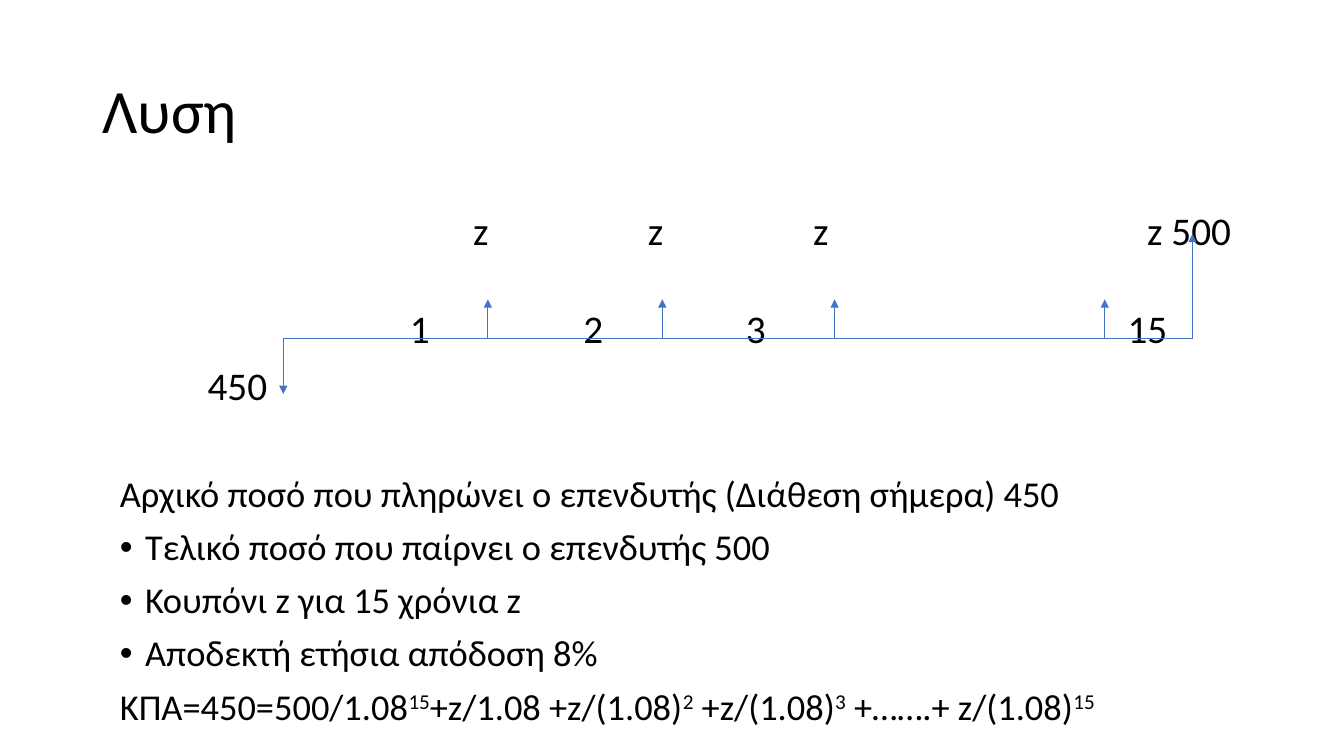
from dataclasses import dataclass

from lxml.etree import SubElement
from pptx import Presentation
from pptx.dml.color import RGBColor
from pptx.enum.shapes import MSO_CONNECTOR
from pptx.enum.text import MSO_ANCHOR
from pptx.oxml.ns import qn
from pptx.util import Inches, Pt


@dataclass(frozen=True)
class Theme:
    font: str = "Calibri"
    ink: RGBColor = RGBColor(0x00, 0x00, 0x00)
    accent: RGBColor = RGBColor(0x44, 0x72, 0xC4)
    title_size: float = 44
    label_size: float = 28
    body_size: float = 26
    line_width: float = 0.5
    line_spacing: float = 0.9
    paragraph_gap: float = 10


class SlideBuilder:
    """Draws on one slide; every length is a percentage of its width or height."""

    def __init__(self, deck, theme):
        self.deck = deck
        self.theme = theme
        self.slide = deck.slides.add_slide(deck.slide_layouts[6])

    def x(self, share):
        return round(self.deck.slide_width * share / 100)

    def y(self, share):
        return round(self.deck.slide_height * share / 100)

    def frame(self, left, top, width, height):
        box = self.slide.shapes.add_textbox(
            self.x(left), self.y(top), self.x(width), self.y(height))
        box.text_frame.word_wrap = True
        return box.text_frame

    def add_runs(self, paragraph, text, size):
        """Add text run by run; every second part between ^ marks is raised."""
        paragraph.line_spacing = self.theme.line_spacing
        for index, part in enumerate(text.split("^")):
            if not part:
                continue
            run = paragraph.add_run()
            run.text = part
            run.font.name = self.theme.font
            run.font.size = Pt(size)
            run.font.color.rgb = self.theme.ink
            if index % 2:
                run._r.get_or_add_rPr().set("baseline", "30000")

    def title(self, text, left, top, width, height):
        frame = self.frame(left, top, width, height)
        frame.vertical_anchor = MSO_ANCHOR.MIDDLE
        self.add_runs(frame.paragraphs[0], text, self.theme.title_size)

    def label(self, text, left, top):
        frame = self.frame(left, top, 8, 5.7)
        frame.margin_left = frame.margin_right = 0
        frame.margin_top = frame.margin_bottom = 0
        self.add_runs(frame.paragraphs[0], text, self.theme.label_size)

    def body(self, items, left, top, width, height):
        frame = self.frame(left, top, width, height)
        for index, (text, bulleted) in enumerate(items):
            paragraph = frame.paragraphs[0] if index == 0 else frame.add_paragraph()
            if bulleted:
                properties = paragraph._p.get_or_add_pPr()
                properties.set("marL", str(Inches(0.25)))
                properties.set("indent", str(-Inches(0.25)))
                SubElement(properties, qn("a:buFont"), typeface="Arial")
                SubElement(properties, qn("a:buChar"), char="•")
            if index:
                paragraph.space_before = Pt(self.theme.paragraph_gap)
            self.add_runs(paragraph, text, self.theme.body_size)

    def line(self, start, end, arrow=True):
        connector = self.slide.shapes.add_connector(
            MSO_CONNECTOR.STRAIGHT, self.x(start[0]), self.y(start[1]),
            self.x(end[0]), self.y(end[1]))
        connector.line.color.rgb = self.theme.accent
        connector.line.width = Pt(self.theme.line_width)
        if arrow:
            outline = connector.line._get_or_add_ln()
            SubElement(outline, qn("a:tailEnd"), type="triangle")
        SubElement(connector._element.spPr, qn("a:effectLst"))


TIMELINE_START, TIMELINE_END, TIMELINE_Y = 21.08, 88.73, 44.8
COUPON_TIP, REDEMPTION_TIP, PRICE_TIP = 39.6, 30.93, 52.13
COUPON_ARROWS = (36.3, 49.28, 62.1, 82.2)
LABEL_ROWS = (
    (28, (("z", 35.2), ("z", 48.2), ("z", 60.5), ("z 500", 85.35))),
    (40.93, (("1", 30.5), ("2", 43.4), ("3", 55.5), ("15", 83.9))),
    (48.53, (("450", 15.45),)),
)
SOLUTION = (
    ("Αρχικό ποσό που πληρώνει ο επενδυτής (Διάθεση σήμερα) 450", False),
    ("Τελικό ποσό που παίρνει ο επενδυτής 500", True),
    ("Κουπόνι z για 15 χρόνια z", True),
    ("Αποδεκτή ετήσια απόδοση 8%", True),
    ("ΚΠΑ=450=500/1.08^15^+z/1.08 +z/(1.08)^2^ +z/(1.08)^3^ +…….+ z/(1.08)^15^", False),
)


def main():
    deck = Presentation()
    deck.slide_width, deck.slide_height = Inches(13.33), Inches(7.5)
    builder = SlideBuilder(deck, Theme())

    builder.title("Λυση", 6.9, 5.33, 86.25, 19.33)
    for top, labels in LABEL_ROWS:
        for text, left in labels:
            builder.label(text, left, top)
    builder.body(SOLUTION, 8.18, 62.27, 86.25, 34.9)

    builder.line((TIMELINE_START, TIMELINE_Y), (TIMELINE_END, TIMELINE_Y), arrow=False)
    cash_flows = [(position, COUPON_TIP) for position in COUPON_ARROWS]
    cash_flows += [(TIMELINE_START, PRICE_TIP), (TIMELINE_END, REDEMPTION_TIP)]
    for position, tip in cash_flows:
        builder.line((position, TIMELINE_Y), (position, tip))

    deck.save("out.pptx")


if __name__ == "__main__":
    main()
